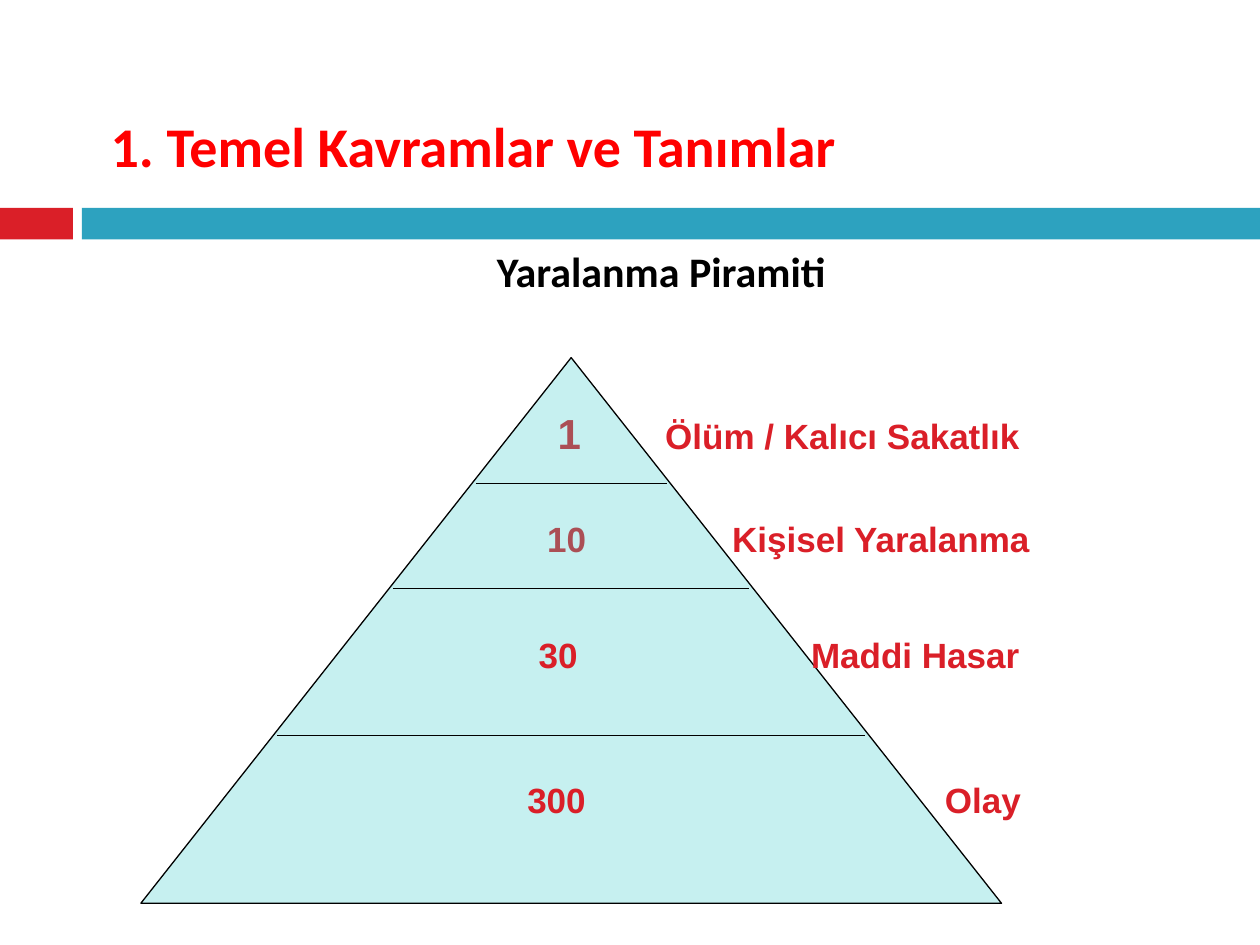
import pptx
import pptx.dml.color
import pptx.enum.shapes
import pptx.enum.text
import pptx.oxml
import pptx.oxml.ns
import pptx.util
import lxml.etree

Cm = pptx.util.Cm
Pt = pptx.util.Pt
ANCHOR = pptx.enum.text.MSO_ANCHOR
ALIGN = pptx.enum.text.PP_ALIGN
SHAPE = pptx.enum.shapes.MSO_SHAPE

COLORS = {
    "title": "FF0000",
    "text": "000000",
    "accent": "DA1F28",
    "band": "2DA2BF",
    "pyramid": "33CCCC",
    "outline": "000000",
}
DIVIDERS = [2.54, 4.65, 7.62]
DIVIDER_GAP = 0.08
HIDDEN_ROWS = [
    ("1", "Ölüm / Kalıcı Sakatlık", 24, (6.35, 0.99, 13.51, 1.17), 8.40, 10.57),
    ("10", "Kişisel Yaralanma", 20, (6.28, 3.18, 13.69, 1.02), 8.19, 11.92),
]
FRONT_ROWS = [
    ("30", "Maddi Hasar", 20, (6.46, 5.52, 13.08, 1.02), 8.02, 13.51),
    ("300", "Olay", 20, (6.86, 8.46, 11.91, 1.02), 7.79, 16.21),
]


def rgb(name):
    """Return the named colour."""
    return pptx.dml.color.RGBColor.from_string(COLORS[name])


def format_run(run, size, font, color):
    """Make a run bold in the given size, font and colour."""
    run.font.size = Pt(size)
    run.font.name = font
    run.font.bold = True
    run.font.color.rgb = rgb(color)


def add_text_box(slide, box, anchor):
    """Add an empty wrapping text box and return its text frame."""
    text_frame = slide.shapes.add_textbox(*map(Cm, box)).text_frame
    text_frame.word_wrap = True
    text_frame.vertical_anchor = anchor
    return text_frame


def add_heading(slide, box, text, size, color, anchor, alignment):
    """Add a one-line heading in the given box."""
    text_frame = add_text_box(slide, box, anchor)
    text_frame.text = text
    paragraph = text_frame.paragraphs[0]
    paragraph.alignment = alignment
    format_run(paragraph.runs[0], size, "Calibri", color)


def add_filled_shape(slide, kind, box, color):
    """Add a flat preset shape without an outline."""
    shape = slide.shapes.add_shape(kind, *map(Cm, box))
    shape.shadow.inherit = False
    shape.fill.solid()
    shape.fill.fore_color.rgb = rgb(color)
    shape.line.fill.background()
    return shape


def add_bands(slide, box):
    """Add the short accent band and the long band beside it."""
    left, top, width, height = box
    accent_width, start = 1.47, 1.65
    add_filled_shape(slide, SHAPE.RECTANGLE, (left, top, accent_width, height), "accent")
    add_filled_shape(slide, SHAPE.RECTANGLE, (left + start, top, width - start, height), "band")


def add_row(slide, origin, row):
    """Add a number and its label, aligned by a tab stop."""
    number, label, number_size, (left, top, width, height), number_left, label_left = row
    text_frame = add_text_box(
        slide, (origin[0] + left, origin[1] + top, width, height), ANCHOR.MIDDLE)
    text_frame.margin_left = Cm(number_left - left)
    paragraph = text_frame.paragraphs[0]
    paragraph.text = number + "\t"
    paragraph.add_run().text = label
    paragraph.line_spacing = 0.9
    for run, size in zip(paragraph.runs, (number_size, 20)):
        format_run(run, size, "Arial", "accent")
    qn = pptx.oxml.ns.qn
    tabs = lxml.etree.SubElement(paragraph._p.get_or_add_pPr(), qn("a:tabLst"))
    lxml.etree.SubElement(
        tabs, qn("a:tab"), pos=str(Cm(label_left - number_left)), algn="l")


def add_divider(slide, left, right, height):
    """Add a horizontal divider line."""
    connector = slide.shapes.add_connector(
        pptx.enum.shapes.MSO_CONNECTOR.STRAIGHT, Cm(left), Cm(height), Cm(right), Cm(height))
    connector.line.color.rgb = rgb("outline")
    connector.line.width = Pt(0.75)
    lxml.etree.SubElement(connector._element.spPr, pptx.oxml.ns.qn("a:effectLst"))


def add_pyramid(slide, box):
    """Add the translucent pyramid with its dividers and rows."""
    left, top, width, height = box
    for row in HIDDEN_ROWS:
        add_row(slide, (left, top), row)
    triangle = add_filled_shape(slide, SHAPE.ISOSCELES_TRIANGLE, box, "pyramid")
    triangle.line.color.rgb = rgb("outline")
    triangle.line.width = Pt(0.75)
    qn = pptx.oxml.ns.qn
    fill_color = triangle._element.spPr.find(qn("a:solidFill")).find(qn("a:srgbClr"))
    lxml.etree.SubElement(fill_color, qn("a:alpha"), val="28000")
    center = left + width / 2
    for depth in DIVIDERS:
        half = width / 2 * depth / height - DIVIDER_GAP
        add_divider(slide, center - half, center + half, top + depth)
    for row in FRONT_ROWS:
        add_row(slide, (left, top), row)


def main():
    """Build and save the presentation."""
    presentation = pptx.Presentation()
    presentation.slide_width = Cm(25.4)
    presentation.slide_height = Cm(19.05)
    slide = presentation.slides.add_slide(presentation.slide_layouts[6])
    add_bands(slide, (0, 4.19, 25.4, 0.64))
    add_pyramid(slide, (2.84, 7.21, 17.35, 11))
    add_heading(slide, (1.9, 4.78, 22.86, 1.35), "Yaralanma Piramiti",
                24, "text", ANCHOR.MIDDLE, ALIGN.CENTER)
    add_heading(slide, (1.98, 0, 22.66, 3.73), "1. Temel Kavramlar ve Tanımlar",
                32, "title", ANCHOR.BOTTOM, ALIGN.LEFT)
    presentation.save("out.pptx")


if __name__ == "__main__":
    main()
